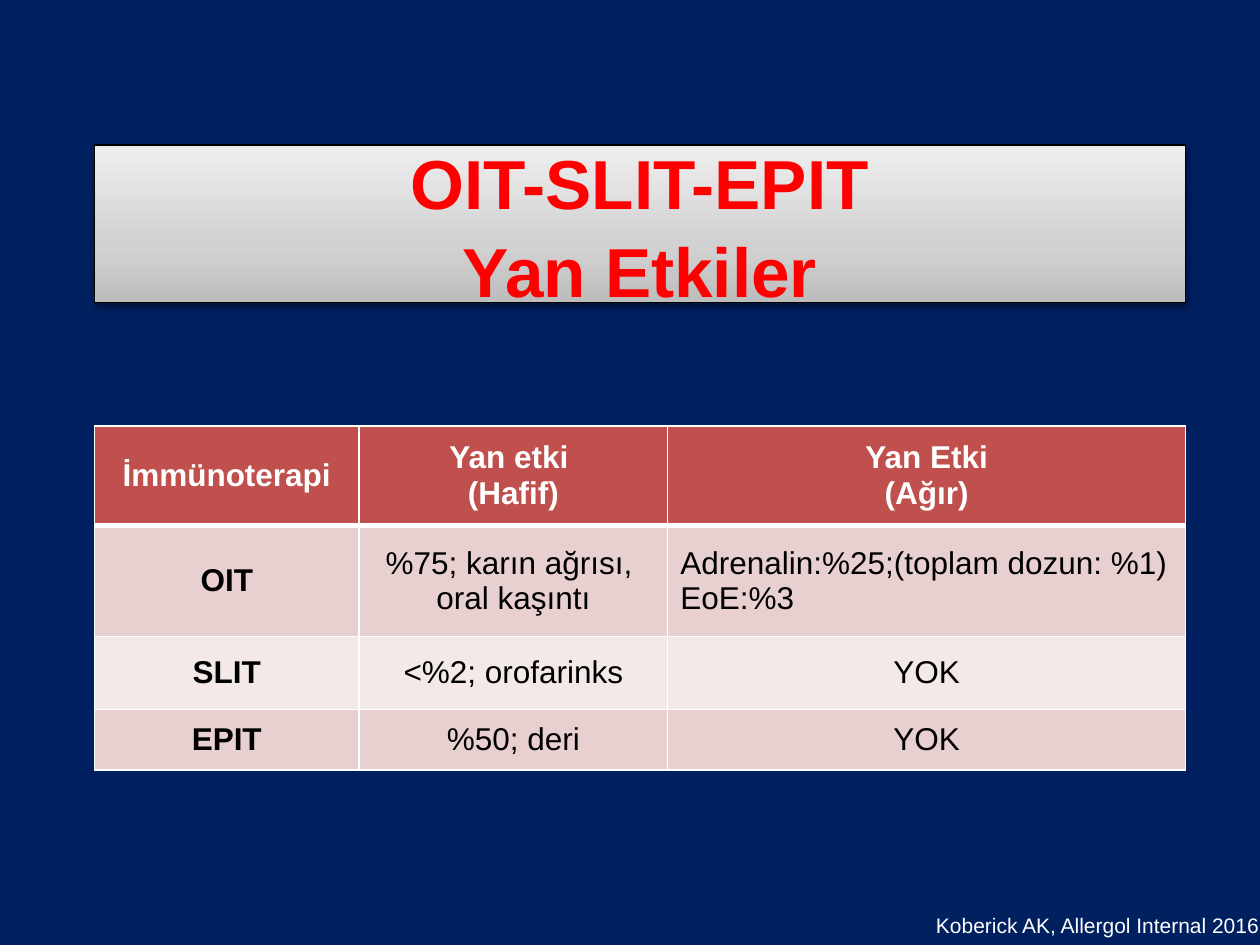
from lxml import etree
from pptx import Presentation
from pptx.dml.color import RGBColor
from pptx.enum.shapes import MSO_SHAPE as Shape
from pptx.enum.text import MSO_ANCHOR as Anchor, MSO_AUTO_SIZE as AutoSize, PP_ALIGN as Align
from pptx.oxml.ns import qn
from pptx.util import Pt

NAVY = RGBColor(0x00, 0x20, 0x60)
RED = RGBColor(0xFF, 0x00, 0x00)
WHITE = RGBColor(0xFF, 0xFF, 0xFF)
BLACK = RGBColor(0x00, 0x00, 0x00)
BRICK = RGBColor(0xC0, 0x50, 0x4D)
ROSE = RGBColor(0xE8, 0xD0, 0xD0)
PALE_ROSE = RGBColor(0xF4, 0xE9, 0xE9)
GREY_STOPS = [
    (0, RGBColor(0xBD, 0xBD, 0xBD)),
    (35, RGBColor(0xD1, 0xD1, 0xD1)),
    (100, RGBColor(0xEE, 0xEE, 0xEE)),
]

COLUMN_WIDTHS = [151.2, 176.4, 295.92]
ROW_HEIGHTS = [56.88, 63.36, 41.76, 34.56]
SIDE_EFFECTS = [
    [["İmmünoterapi"], ["Yan etki ", "(Hafif)"], ["Yan Etki", "(Ağır)"]],
    [["OIT"], ["%75; karın ağrısı, ", "oral kaşıntı"],
     ["Adrenalin:%25;(toplam dozun: %1) EoE:%3"]],
    [["SLIT"], ["<%2; orofarinks"], ["YOK"]],
    [["EPIT"], ["%50; deri"], ["YOK"]],
]


def add_run(paragraph, text, size, color, bold=False):
    run = paragraph.add_run()
    run.text = text
    run.font.name = "Arial"
    run.font.size = Pt(size)
    run.font.bold = bold
    run.font.color.rgb = color


def add_color(parent, color):
    return etree.SubElement(parent, qn("a:srgbClr"), val=str(color))


def fill_gradient(shape, stops):
    shape.fill.gradient()
    shape.fill.gradient_angle = 90
    stop_list = shape._element.spPr.find(".//" + qn("a:gsLst"))
    for default_stop in list(stop_list):
        stop_list.remove(default_stop)
    for position, color in stops:
        add_color(etree.SubElement(stop_list, qn("a:gs"), pos=str(position * 1000)), color)


def cast_shadow(shape, color, opacity, blur, distance):
    shape.shadow.inherit = False
    effects = shape._element.spPr.find(qn("a:effectLst"))
    shadow = etree.SubElement(
        effects, qn("a:outerShdw"), blurRad=str(Pt(blur)), dist=str(Pt(distance)),
        dir="5400000", rotWithShape="0")
    etree.SubElement(add_color(shadow, color), qn("a:alpha"), val=str(opacity * 1000))


def add_title(slide, lines):
    banner = slide.shapes.add_shape(Shape.RECTANGLE, Pt(54), Pt(82.8), Pt(623.52), Pt(90))
    banner.line.color.rgb = BLACK
    banner.line.width = Pt(0.75)
    fill_gradient(banner, GREY_STOPS)
    cast_shadow(banner, BLACK, 38, 3.1, 1.6)
    frame = banner.text_frame
    frame.word_wrap = True
    frame.vertical_anchor = Anchor.MIDDLE
    heading = frame.paragraphs[0]
    heading.alignment = Align.CENTER
    heading.line_spacing = 1.05
    for index, line in enumerate(lines):
        if index:
            heading.add_line_break()
        add_run(heading, line, 39.6, RED, True)


def set_borders(cell, widths):
    properties = cell._tc.get_or_add_tcPr()
    for side, width in widths.items():
        border = etree.SubElement(properties, qn(f"a:ln{side}"), w=str(Pt(width)))
        add_color(etree.SubElement(border, qn("a:solidFill")), WHITE)


def fill_cell(cell, lines, row, column):
    set_borders(cell, {"L": 1, "R": 1, "T": 3 if row == 1 else 1, "B": 3 if row == 0 else 1})
    cell.fill.solid()
    cell.fill.fore_color.rgb = BRICK if row == 0 else ROSE if row % 2 else PALE_ROSE
    cell.vertical_anchor = Anchor.MIDDLE
    frame = cell.text_frame
    for index, line in enumerate(lines):
        paragraph = frame.add_paragraph() if index else frame.paragraphs[0]
        paragraph.alignment = Align.LEFT if (row, column) == (1, 2) else Align.CENTER
        add_run(paragraph, line, 18, BLACK if row else WHITE, row == 0 or column == 0)


def add_side_effect_table(slide):
    table = slide.shapes.add_table(
        len(ROW_HEIGHTS), len(COLUMN_WIDTHS), Pt(54), Pt(243.36),
        Pt(sum(COLUMN_WIDTHS)), Pt(sum(ROW_HEIGHTS))).table
    for column, width in zip(table.columns, COLUMN_WIDTHS):
        column.width = Pt(width)
    for row, height in zip(table.rows, ROW_HEIGHTS):
        row.height = Pt(height)
    for row, therapy in enumerate(SIDE_EFFECTS):
        for column, lines in enumerate(therapy):
            fill_cell(table.cell(row, column), lines, row, column)


def add_citation(slide, text):
    frame = slide.shapes.add_textbox(Pt(527.76), Pt(517.68), Pt(200.16), Pt(21.6)).text_frame
    frame.word_wrap = False
    frame.auto_size = AutoSize.SHAPE_TO_FIT_TEXT
    add_run(frame.paragraphs[0], text, 12, WHITE)


def main():
    deck = Presentation()
    deck.slide_width, deck.slide_height = Pt(720), Pt(540)
    slide = deck.slides.add_slide(deck.slide_layouts[6])
    slide.background.fill.solid()
    slide.background.fill.fore_color.rgb = NAVY
    add_title(slide, ["OIT-SLIT-EPIT", "Yan Etkiler"])
    add_side_effect_table(slide)
    add_citation(slide, "Koberick AK, Allergol Internal 2016")
    deck.save("out.pptx")


if __name__ == "__main__":
    main()
